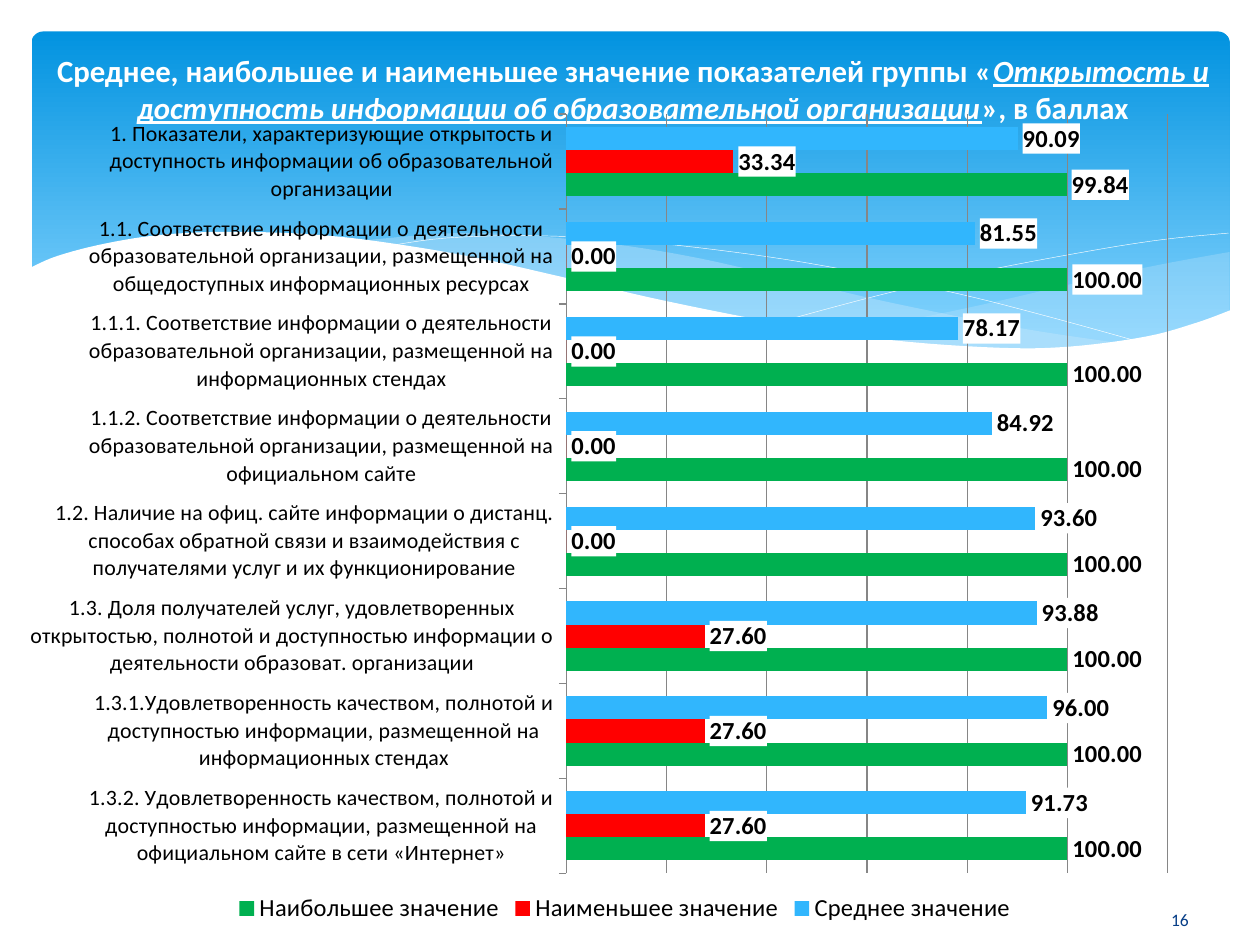
from lxml import etree
from pptx import Presentation
from pptx.chart.data import CategoryChartData
from pptx.dml.color import RGBColor
from pptx.enum.chart import XL_CHART_TYPE, XL_LABEL_POSITION, XL_LEGEND_POSITION, XL_TICK_MARK
from pptx.enum.shapes import MSO_SHAPE
from pptx.enum.text import MSO_ANCHOR, MSO_AUTO_SIZE, PP_ALIGN
from pptx.oxml import parse_xml
from pptx.oxml.ns import qn
from pptx.util import Inches, Pt

BARS = XL_CHART_TYPE.BAR_CLUSTERED
OUTSIDE_END = XL_LABEL_POSITION.OUTSIDE_END
BOTTOM = XL_LEGEND_POSITION.BOTTOM
TICK_OUT = XL_TICK_MARK.OUTSIDE
ROUNDED = MSO_SHAPE.ROUNDED_RECTANGLE
MIDDLE = MSO_ANCHOR.MIDDLE
NO_FIT = MSO_AUTO_SIZE.NONE
CENTER = PP_ALIGN.CENTER

WHITE = RGBColor(0xFF, 0xFF, 0xFF)
BLACK = RGBColor(0, 0, 0)
NAVY = RGBColor(0x07, 0x3E, 0x87)
PANEL_TOP = RGBColor(0x02, 0x93, 0xE0)
PANEL_BOTTOM = RGBColor(0x83, 0xD3, 0xFE)
MIST = RGBColor(0xC6, 0xE7, 0xFC)
GRID_GRAY = RGBColor(0x86, 0x86, 0x86)
BLUE = RGBColor(0x31, 0xB6, 0xFD)
RED = RGBColor(0xFF, 0, 0)
GREEN = RGBColor(0, 0xB0, 0x50)

FONT = "Calibri"
CELL = Inches(0.1)  # the slide is a grid of 100 columns by 75 rows

# Boxes: left column, top row, columns, rows
PANEL_BOX = (2.5, 2.5, 95.1, 27)
WAVE_BOX = (2.3, 18.4, 95.4, 14.5)
TITLE_BOX = (2.6, 2.6, 95.3, 8.9)
NUMBER_BOX = (87.3, 71, 12.7, 4)
CHART_BOX = (1.2, 7.4, 96.8, 66.3)

# Wave edges, in cells from the corner of the wave box
RIGHT_WAVE = [
    [(63.8, 8.1), (68.3, 7.3), (75.6, 5.8), (83.8, 3.9), (89.8, 2.6), (95.3, 1.6)],
    [(95.3, 6.3), (91.9, 7.5), (87.4, 8.6), (82.1, 9.3), (76.9, 9.3), (70.9, 9), (63.8, 8.1)],
]
MIDDLE_WAVE = [
    [(87, 8.9), (78.4, 7.6), (68.3, 5.6), (60.6, 3.8), (53.2, 2.1), (46.6, 1),
     (39.7, 0.3), (33.8, 0.1), (26.3, 0.7)],
    [(26.3, 0.7), (33.9, 1.9), (42.6, 3.8), (50.7, 5.6), (59.5, 7.4), (68.6, 8.8),
     (77.3, 9.4), (87, 8.9)],
]
LONG_LINE = [[(28.6, 1.1), (33, 0.5), (39.3, 0.3), (46.6, 0.6), (55.9, 1.6),
              (64.2, 2.9), (73.7, 4.9), (80.8, 6.7), (88.4, 8.8)]]
SHORT_LINE = [[(59, 7.3), (67.2, 5.1), (75.3, 3.2), (84.3, 1.5), (90.1, 0.6), (95.2, 0.1)]]
WHITE_WAVE = [
    [(0, 2.9), (2.3, 1.9), (6.2, 0.9), (10.9, 0.2), (17, 0), (24.8, 0.4), (34.2, 1.8),
     (42.4, 3.6), (50.6, 5.5), (60.3, 7.4), (68.5, 8.6), (77, 9.2), (82.7, 9.1),
     (88.7, 8.3), (92.7, 7.2), (95.4, 6.2)],
    [(95.4, 14.5), (0, 14.5)],
]

TITLE = [
    ("Среднее, наибольшее и наименьшее значение показателей группы «", False),
    ("Открытость и доступность информации об образовательной организации", True),
    ("», в баллах", False),
]
CATEGORIES = [
    "1. Показатели, характеризующие открытость и доступность информации об образовательной организации",
    "1.1. Соответствие информации о деятельности образовательной организации, размещенной на общедоступных информационных ресурсах",
    "1.1.1. Соответствие информации о деятельности образовательной организации, размещенной на информационных стендах",
    "1.1.2. Соответствие информации о деятельности образовательной организации, размещенной на официальном сайте",
    "1.2. Наличие на офиц. сайте информации о дистанц. способах обратной связи и взаимодействия с получателями услуг и их функционирование",
    "1.3. Доля получателей услуг, удовлетворенных открытостью, полнотой и доступностью информации о деятельности образоват. организации",
    "1.3.1.Удовлетворенность качеством, полнотой и доступностью информации, размещенной на информационных стендах",
    "1.3.2. Удовлетворенность качеством, полнотой и доступностью информации, размещенной на официальном сайте в сети «Интернет»",
]
SERIES = [
    ("Среднее значение", BLUE, [90.09, 81.55, 78.17, 84.92, 93.6, 93.88, 96, 91.73]),
    ("Наименьшее значение", RED, [33.34, 0, 0, 0, 0, 27.6, 27.6, 27.6]),
    ("Наибольшее значение", GREEN, [99.84] + [100] * 7),
]
PLOT_SHARES = {"x": 0.452, "y": 0.025, "w": 0.493, "h": 0.909}


def place(box):
    return [round(side * CELL) for side in box]


def style(font, size, color, bold=False):
    font.name, font.size, font.bold = FONT, Pt(size), bold
    font.color.rgb = color


def smooth(points, steps=6):
    """Catmull-Rom curve through the points."""
    if len(points) < 3:
        return points
    padded = [points[0], *points, points[-1]]
    curve = [points[0]]
    for a, b, c, d in zip(padded, padded[1:], padded[2:], padded[3:]):
        for step in range(1, steps + 1):
            t = step / steps
            curve.append(tuple(
                (2 * q + (r - p) * t + (2 * p - 5 * q + 4 * r - s) * t ** 2
                 + (3 * q - p - 3 * r + s) * t ** 3) / 2
                for p, q, r, s in zip(a, b, c, d)))
    return curve


def add_wave(page, box, edges, fill=None, opacity=100):
    """A filled wave, or a thin white curve when no fill is given."""
    left, top = box[:2]
    points = [((left + x) * CELL, (top + y) * CELL) for edge in edges for x, y in smooth(edge)]
    builder = page.shapes.build_freeform(*points[0])
    builder.add_line_segments(points[1:], close=fill is not None)
    wave = builder.convert_to_shape()
    wave.shadow.inherit = False
    if fill is None:
        wave.fill.background()
        wave.line.color.rgb = WHITE
        wave.line.width = Pt(0.25)
        return
    wave.fill.solid()
    wave.fill.fore_color.rgb = fill
    wave.line.fill.background()
    if opacity < 100:
        color = wave._element.spPr.find(".//" + qn("a:srgbClr"))
        etree.SubElement(color, qn("a:alpha"), val=str(opacity * 1000))


def add_backdrop(page, panel_box, wave_box):
    panel = page.shapes.add_shape(ROUNDED, *place(panel_box))
    panel.adjustments[0] = 0.034
    panel.shadow.inherit = False
    panel.line.fill.background()
    panel.fill.gradient()
    panel.fill.gradient_angle = 270
    for stop, color, position in zip(panel.fill.gradient_stops, (PANEL_TOP, PANEL_BOTTOM), (0, 0.9)):
        stop.color.rgb = color
        stop.position = position
    add_wave(page, wave_box, RIGHT_WAVE, MIST, 29)
    add_wave(page, wave_box, MIDDLE_WAVE, MIST, 40)
    add_wave(page, wave_box, LONG_LINE)
    add_wave(page, wave_box, SHORT_LINE)
    add_wave(page, wave_box, WHITE_WAVE, WHITE)


def add_title(page, box):
    title = page.shapes.title
    page.shapes._spTree.append(title._element)  # bring in front of the backdrop
    title.left, title.top, title.width, title.height = place(box)
    frame = title.text_frame
    frame.word_wrap, frame.auto_size, frame.vertical_anchor = True, NO_FIT, MIDDLE
    para = frame.paragraphs[0]
    para.alignment = CENTER
    for text, emphasis in TITLE:
        span = para.add_run()
        span.text = text
        style(span.font, 17.6, WHITE, bold=True)
        span.font.italic = span.font.underline = emphasis


def add_page_number(page, box):
    frame = page.shapes.add_textbox(*place(box)).text_frame
    frame.word_wrap, frame.vertical_anchor = True, MIDDLE
    frame.text = "16"
    para = frame.paragraphs[0]
    para.alignment = CENTER
    style(para.runs[0].font, 10, NAVY)


def add_scores_chart(page, box):
    data = CategoryChartData(number_format="0.00")
    data.categories = CATEGORIES
    for name, _, values in SERIES:
        data.add_series(name, values)
    chart = page.shapes.add_chart(BARS, *place(box), data).chart
    style(chart.font, 14, BLACK)
    chart.has_title = False
    chart.has_legend = True
    chart.legend.position = BOTTOM
    chart.legend.include_in_layout = False

    # Axes
    names, scores = chart.category_axis, chart.value_axis
    names.reverse_order = True
    names.major_tick_mark = TICK_OUT
    style(names.tick_labels.font, 12.5, BLACK)
    names.format.line.color.rgb = GRID_GRAY
    scores.visible = False
    scores.minimum_scale, scores.maximum_scale, scores.major_unit = 0, 120, 20
    scores.has_major_gridlines = True
    scores.major_gridlines.format.line.color.rgb = GRID_GRAY

    # Bars with white-backed labels
    plot = chart.plots[0]
    plot.gap_width, plot.overlap, plot.vary_by_categories = 112, 0, False
    for series, (_, color, _) in zip(plot.series, SERIES):
        series.format.fill.solid()
        series.format.fill.fore_color.rgb = color
        labels = series.data_labels
        labels.show_value = True
        labels.number_format, labels.number_format_is_linked = "0.00", False
        labels.position = OUTSIDE_END
        style(labels.font, 14, BLACK, bold=True)
        backing = parse_xml(
            '<c:spPr xmlns:c="http://schemas.openxmlformats.org/drawingml/2006/chart"'
            ' xmlns:a="http://schemas.openxmlformats.org/drawingml/2006/main">'
            f'<a:solidFill><a:srgbClr val="{WHITE}"/></a:solidFill></c:spPr>')
        labels._element.find(qn("c:numFmt")).addnext(backing)

    # Fixed inner plot area
    area = chart._chartSpace.find(".//" + qn("c:plotArea"))
    layout = area.find(qn("c:layout"))
    if layout is None:
        layout = etree.Element(qn("c:layout"))
        area.insert(0, layout)
    manual = etree.SubElement(layout, qn("c:manualLayout"))
    settings = {"layoutTarget": "inner", "xMode": "edge", "yMode": "edge", **PLOT_SHARES}
    for tag, value in settings.items():
        etree.SubElement(manual, qn("c:" + tag), val=str(value))


def main():
    deck = Presentation()
    deck.slide_width, deck.slide_height = 100 * CELL, 75 * CELL
    page = deck.slides.add_slide(deck.slide_layouts[5])
    add_backdrop(page, PANEL_BOX, WAVE_BOX)
    add_title(page, TITLE_BOX)
    add_page_number(page, NUMBER_BOX)
    add_scores_chart(page, CHART_BOX)
    deck.save("out.pptx")


if __name__ == "__main__":
    main()
